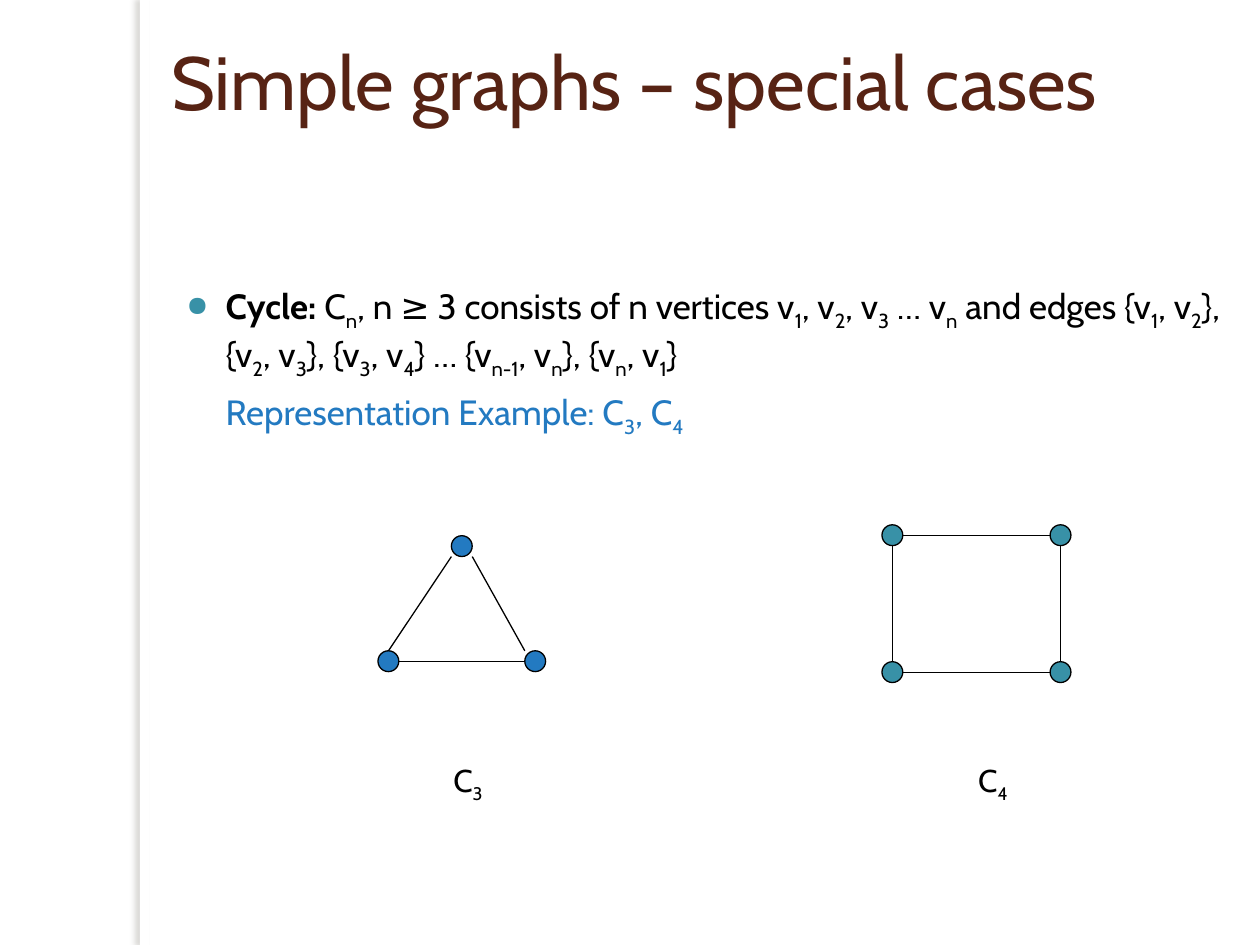
from lxml import etree
from pptx import Presentation
from pptx.dml.color import RGBColor
from pptx.enum.shapes import MSO_CONNECTOR, MSO_SHAPE
from pptx.enum.text import MSO_ANCHOR, PP_ALIGN
from pptx.oxml.ns import qn
from pptx.util import Cm, Pt

RECTANGLE = MSO_SHAPE.RECTANGLE
OVAL = MSO_SHAPE.OVAL
STRAIGHT = MSO_CONNECTOR.STRAIGHT
MIDDLE = MSO_ANCHOR.MIDDLE
TOP_ANCHOR = MSO_ANCHOR.TOP
LEFT_ALIGN = PP_ALIGN.LEFT

BLACK, WHITE, BROWN = "000000", "FFFFFF", "572314"
BLUE, TEAL, SHADOW = "237AC1", "3891A7", "736F63"
NODE_SIZE = 0.42
TOP, LEFT, BOTTOM, RIGHT = (0.5, 0), (0, 0.5), (0.5, 1), (1, 0.5)
TOP_LEFT, BOTTOM_LEFT, BOTTOM_RIGHT = (0, 0), (0, 1), (1, 1)


def color(value):
    return RGBColor.from_string(value)


def add_element(parent, tag, **attributes):
    return etree.SubElement(parent, qn(tag), attributes)


class SlideBuilder:
    font = "Cabin"
    line_width = Pt(0.75)

    def __init__(self, slide):
        self.slide = slide

    def shape(self, kind, left, top, width, height, fill, line=None):
        shape = self.slide.shapes.add_shape(kind, Cm(left), Cm(top), Cm(width), Cm(height))
        shape.shadow.inherit = False
        shape.fill.solid()
        shape.fill.fore_color.rgb = color(fill)
        if line:
            shape.line.color.rgb = color(line)
            shape.line.width = self.line_width
        else:
            shape.line.fill.background()
        return shape

    def side_strip(self, left, width, height):
        strip = self.shape(RECTANGLE, left, 0, width, height, WHITE)
        effects = strip._element.spPr.find(qn("a:effectLst"))
        shadow = add_element(effects, "a:outerShdw", blurRad=str(Pt(3)), dist=str(Pt(3)),
                             dir="10800000", algn="tl", rotWithShape="0")
        shade = add_element(shadow, "a:srgbClr", val=SHADOW)
        add_element(shade, "a:alpha", val="25000")

    def text_box(self, left, top, width, height):
        frame = self.slide.shapes.add_textbox(Cm(left), Cm(top), Cm(width), Cm(height)).text_frame
        frame.word_wrap = True
        frame.vertical_anchor = TOP_ANCHOR
        return frame

    def runs(self, paragraph, text, size, text_color, bold=False):
        for index, part in enumerate(text.split("_")):
            if not part:
                continue
            run = paragraph.add_run()
            run.text = part
            run.font.name = self.font
            run.font.size = Pt(size)
            run.font.bold = bold
            run.font.color.rgb = color(text_color)
            if index % 2:
                run.font._element.set("baseline", "-25000")

    def indent(self, paragraph, margin, first_line=0.0):
        properties = paragraph._p.get_or_add_pPr()
        properties.set("marL", str(Cm(margin)))
        properties.set("indent", str(Cm(first_line)))
        return properties

    def bullet(self, paragraph, margin, first_line):
        properties = self.indent(paragraph, margin, first_line)
        add_element(add_element(properties, "a:buClr"), "a:srgbClr", val=TEAL)
        add_element(properties, "a:buSzPct", val="80000")
        add_element(properties, "a:buChar", char="●")

    def node(self, left, top, fill):
        return self.shape(OVAL, left, top, NODE_SIZE, NODE_SIZE, fill, BLACK)

    def edge(self, start, start_side, end, end_side):
        points = []
        for node, (across, down) in ((start, start_side), (end, end_side)):
            points += [node.left + int(node.width * across), node.top + int(node.height * down)]
        connector = self.slide.shapes.add_connector(STRAIGHT, *points)
        connector.line.color.rgb = color(BLACK)
        connector.line.width = self.line_width
        add_element(connector._element.spPr, "a:effectLst")

    def label(self, left, text):
        frame = self.shape(RECTANGLE, left, 15.45, 0.85, 0.64, WHITE, WHITE).text_frame
        frame.word_wrap = False
        frame.vertical_anchor = MIDDLE
        frame.paragraphs[0].alignment = LEFT_ALIGN
        self.runs(frame.paragraphs[0], text, 18, BLACK)


def main():
    presentation = Presentation()
    presentation.slide_width = Cm(25.4)
    presentation.slide_height = Cm(19.05)
    builder = SlideBuilder(presentation.slides.add_slide(presentation.slide_layouts[6]))

    builder.side_strip(2.82, 0.2, 19.05)
    title = builder.text_box(3.2, 0.58, 21.64, 4.06)
    builder.runs(title.paragraphs[0], "Simple graphs – special cases", 43, BROWN)

    body = builder.text_box(3.28, 5.61, 21.65, 4.34)
    definition = body.paragraphs[0]
    builder.bullet(definition, 1.02, -0.79)
    builder.runs(definition, "Cycle:", 20, BLACK, bold=True)
    builder.runs(
        definition,
        " C_n_, n ≥ 3 consists of n vertices v_1_, v_2_, v_3_ … v_n_ and edges "
        "{v_1_, v_2_}, {v_2_, v_3_}, {v_3_, v_4_} … {v_n-1_, v_n_}, {v_n_, v_1_}",
        20, BLACK)
    example = body.add_paragraph()
    example.space_before = Pt(6)
    builder.indent(example, 1.02)
    builder.runs(example, "Representation Example: C_3_, C_4_", 20, BLUE)

    left_node, right_node, top_node = [
        builder.node(left, top, BLUE) for left, top in ((7.62, 13.12), (10.58, 13.12), (9.1, 10.8))]
    top_left, top_right, bottom_left, bottom_right = [
        builder.node(left, top, TEAL) for top in (10.58, 13.34) for left in (17.78, 21.17)]

    for edge in (
        (left_node, RIGHT, right_node, LEFT),
        (top_node, BOTTOM_RIGHT, right_node, TOP_LEFT),
        (top_node, BOTTOM_LEFT, left_node, TOP),
        (top_left, RIGHT, top_right, LEFT),
        (top_right, BOTTOM, bottom_right, TOP),
        (bottom_right, LEFT, bottom_left, RIGHT),
        (top_left, BOTTOM, bottom_left, TOP),
    ):
        builder.edge(*edge)

    builder.label(8.89, "C_3_")
    builder.label(19.47, "C_4_")
    presentation.save("out.pptx")


if __name__ == "__main__":
    main()
